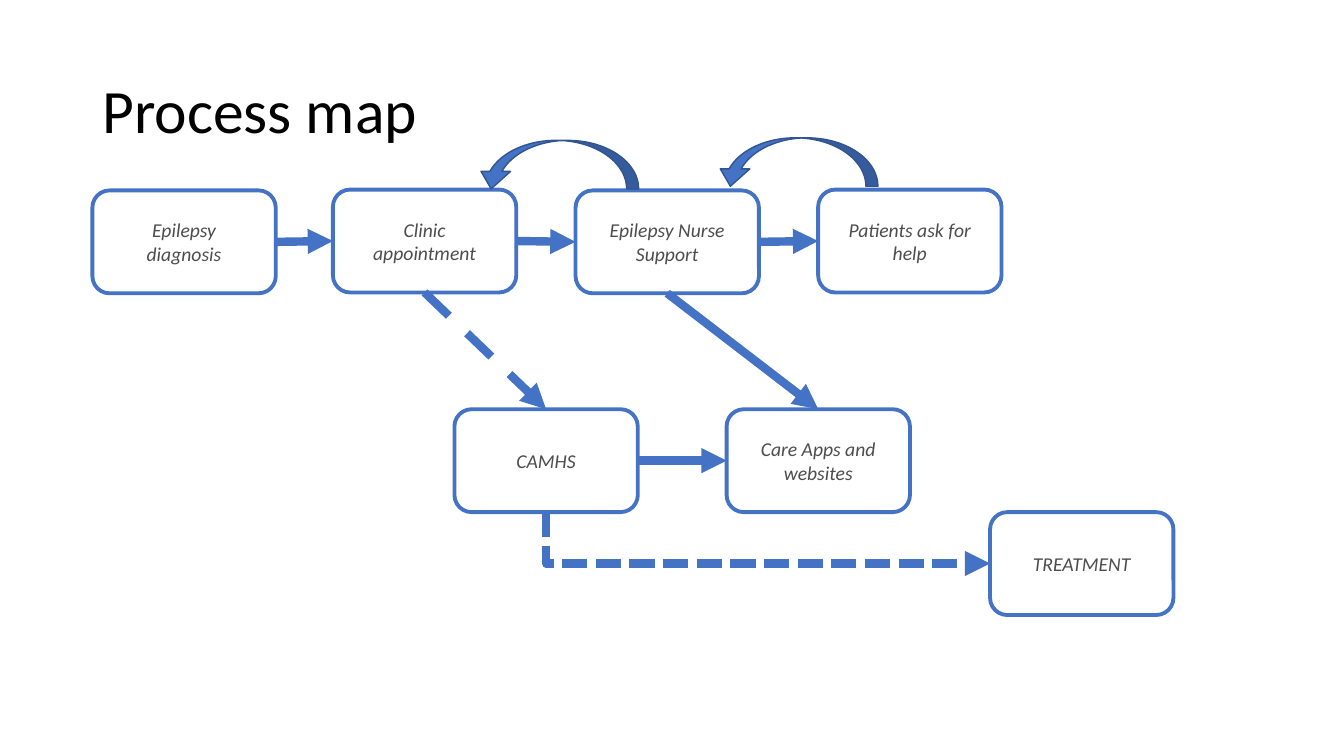
from dataclasses import dataclass

import pptx
import pptx.dml.color
import pptx.enum.dml
import pptx.enum.shapes
import pptx.enum.text
import pptx.oxml
import pptx.oxml.ns
import pptx.util
from lxml import etree

Pt = pptx.util.Pt
RGB = pptx.dml.color.RGBColor
Kind = pptx.enum.shapes.MSO_SHAPE
Wire = pptx.enum.shapes.MSO_CONNECTOR
Dash = pptx.enum.dml.MSO_LINE
Align = pptx.enum.text.PP_ALIGN
Anchor = pptx.enum.text.MSO_ANCHOR
qn = pptx.oxml.ns.qn

TOP, LEFT, BOTTOM, RIGHT = range(4)


@dataclass(frozen=True)
class Theme:
    font: str = "Calibri"
    blue: RGB = RGB(0x44, 0x72, 0xC4)
    edge: RGB = RGB(0x32, 0x54, 0x91)
    text: RGB = RGB(0x4D, 0x4D, 0x4D)
    black: RGB = RGB(0, 0, 0)
    title: float = 44
    body: float = 14
    frame: float = 2.75
    link: float = 6
    rim: float = 1


@dataclass(frozen=True)
class Step:
    name: str
    text: str
    x: float
    y: float


@dataclass(frozen=True)
class Link:
    start: str
    exit: int
    end: str
    entry: int
    dash: Dash | None = None
    bent: bool = False


THEME = Theme()
STEP_W, STEP_H = 131, 73.5
ARC_W, ARC_H = 34.6, 115.9
ARC_ADJ = (0.248, 0.609, 0.359)

STEPS = [
    Step("diagnosis", "Epilepsy\ndiagnosis", 66, 136),
    Step("clinic", "Clinic\nappointment", 237.8, 135.4),
    Step("nurse", "Epilepsy Nurse\nSupport", 411.1, 136),
    Step("help", "Patients ask for help", 584.4, 135.4),
    Step("camhs", "CAMHS", 324.6, 292.3),
    Step("apps", "Care Apps and websites", 519, 292.3),
    Step("treatment", "TREATMENT", 707.2, 365.8),
]
LINKS = [
    Link("diagnosis", RIGHT, "clinic", LEFT),
    Link("clinic", RIGHT, "nurse", LEFT),
    Link("nurse", RIGHT, "help", LEFT),
    Link("clinic", BOTTOM, "camhs", TOP, Dash.DASH),
    Link("nurse", BOTTOM, "apps", TOP),
    Link("camhs", RIGHT, "apps", LEFT),
    Link("camhs", BOTTOM, "treatment", LEFT, Dash.SQUARE_DOT, True),
]
ARCS = [(380.9, 59.6), (551.8, 57.8)]


def style(frame, size: float, color: RGB, align: Align, italic: bool) -> None:
    frame.word_wrap = True
    frame.vertical_anchor = Anchor.MIDDLE
    for par in frame.paragraphs:
        par.alignment = align
        for run in par.runs:
            run.font.name = THEME.font
            run.font.size = Pt(size)
            run.font.italic = italic
            run.font.color.rgb = color


def add_title(slide, text: str) -> None:
    title = slide.shapes.title
    title.left, title.top = Pt(66), Pt(28.8)
    title.width, title.height = Pt(828), Pt(104.4)
    title.text_frame.text = text
    style(title.text_frame, THEME.title, THEME.black, Align.LEFT, False)
    title.text_frame.paragraphs[0].line_spacing = 0.9


def add_step(slide, step: Step):
    box = slide.shapes.add_shape(
        Kind.ROUNDED_RECTANGLE, Pt(step.x), Pt(step.y), Pt(STEP_W), Pt(STEP_H)
    )
    box.shadow.inherit = False
    box.fill.background()
    box.line.color.rgb = THEME.blue
    box.line.width = Pt(THEME.frame)
    box.text_frame.text = step.text
    style(box.text_frame, THEME.body, THEME.text, Align.CENTER, True)
    return box


def bend(wire) -> None:
    """Turn an elbow into a single corner that runs down, then right."""
    x, y, w, h = wire.left, wire.top, wire.width, wire.height
    wire.left, wire.top = x + (w - h) // 2, y + (h - w) // 2
    wire.width, wire.height = h, w
    props = wire.element.spPr
    props.find(qn("a:prstGeom")).set("prst", "bentConnector2")
    frame = props.find(qn("a:xfrm"))
    frame.set("rot", "16200000")
    frame.set("flipH", "1")


def add_link(slide, link: Link, boxes: dict) -> None:
    kind = Wire.ELBOW if link.bent else Wire.STRAIGHT
    wire = slide.shapes.add_connector(kind, 0, 0, 0, 0)
    wire.begin_connect(boxes[link.start], link.exit)
    wire.end_connect(boxes[link.end], link.entry)
    if link.bent:
        bend(wire)
    wire.line.color.rgb = THEME.blue
    wire.line.width = Pt(THEME.link)
    if link.dash is not None:
        wire.line.dash_style = link.dash
    etree.SubElement(wire.get_or_add_ln(), qn("a:tailEnd"), type="triangle")
    etree.SubElement(wire.element.spPr, qn("a:effectLst"))


def add_arc(slide, x: float, y: float) -> None:
    arc = slide.shapes.add_shape(
        Kind.CURVED_RIGHT_ARROW, Pt(x), Pt(y), Pt(ARC_W), Pt(ARC_H)
    )
    arc.rotation = 90
    for pos, value in enumerate(ARC_ADJ):
        arc.adjustments[pos] = value
    arc.shadow.inherit = False
    arc.fill.solid()
    arc.fill.fore_color.rgb = THEME.blue
    arc.line.color.rgb = THEME.edge
    arc.line.width = Pt(THEME.rim)


def main() -> None:
    deck = pptx.Presentation()
    deck.slide_width, deck.slide_height = Pt(960), Pt(540)
    slide = deck.slides.add_slide(deck.slide_layouts[5])
    add_title(slide, "Process map")
    boxes = {step.name: add_step(slide, step) for step in STEPS}
    for link in LINKS:
        add_link(slide, link, boxes)
    for x, y in ARCS:
        add_arc(slide, x, y)
    deck.save("out.pptx")


if __name__ == "__main__":
    main()
